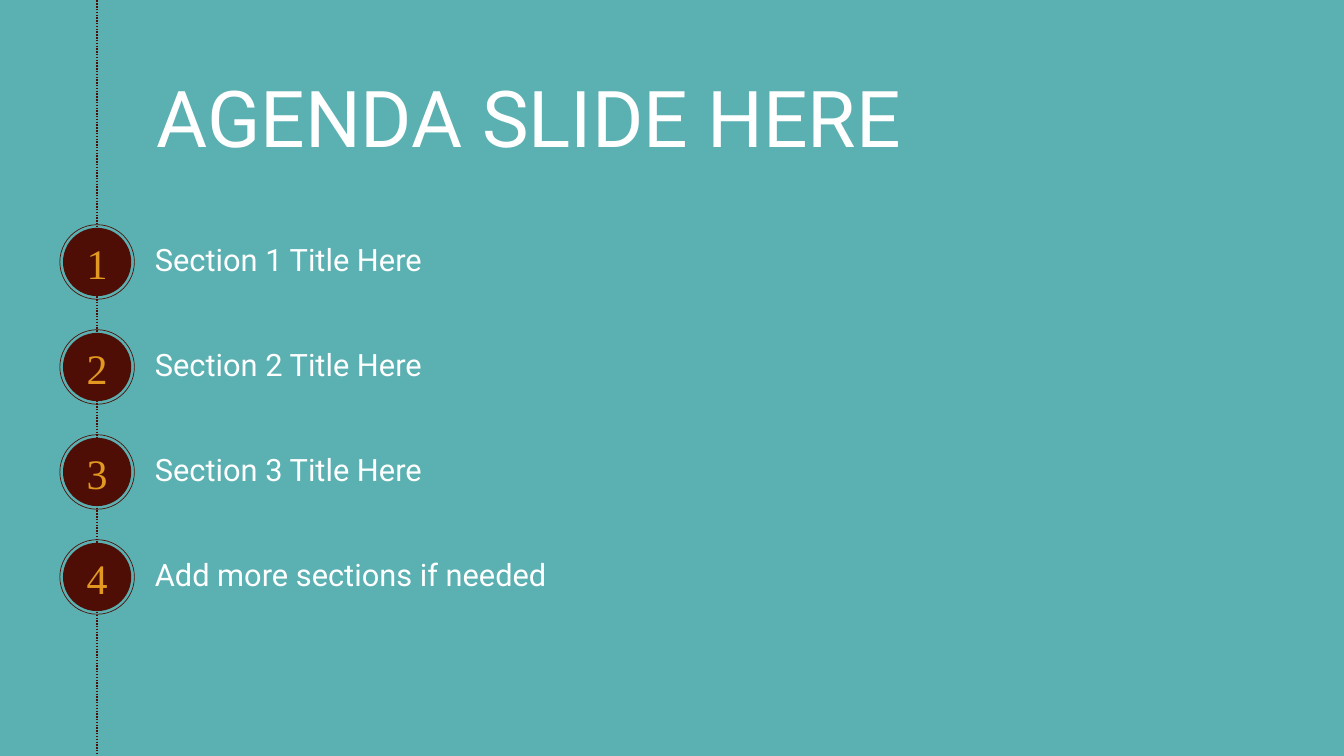
import pptx
import pptx.dml.color
import pptx.enum.dml
import pptx.enum.shapes
import pptx.enum.text
import pptx.oxml.xmlchemy
import pptx.util
from lxml import etree
from pptx.oxml.ns import qn

EMU_PER_PX = 9525
SLIDE_WIDTH, SLIDE_HEIGHT = 2560, 1440
SECTION_PITCH = 200
COLORS = {
    "background": "5BB0B2",
    "maroon": "4E0E05",
    "number": "E39920",
    "text": "FFFFFF",
}
SECTIONS = [
    "Section 1 Title Here",
    "Section 2 Title Here",
    "Section 3 Title Here",
    "Add more sections if needed",
]


def px(length):
    return pptx.util.Emu(length * EMU_PER_PX)


def color(name):
    return pptx.dml.color.RGBColor.from_string(COLORS[name])


def add_plain_shape(slide, kind, box, fill=None, line=None):
    shape = slide.shapes.add_shape(kind, *map(px, box))
    shape.shadow.inherit = False
    if fill:
        shape.fill.solid()
        shape.fill.fore_color.rgb = color(fill)
    else:
        shape.fill.background()
    if line:
        shape.line.color.rgb = color(line)
        shape.line.width = pptx.util.Pt(1)
    else:
        shape.line.fill.background()
    return shape


def add_text(slide, box, text, size, font_name, color_name, inset=0, spacing=1.0, centered=False):
    text_box = slide.shapes.add_textbox(*map(px, box))
    text_frame = text_box.text_frame
    text_frame.word_wrap = True
    text_frame.vertical_anchor = pptx.enum.text.MSO_ANCHOR.MIDDLE
    text_frame.margin_left = text_frame.margin_right = px(inset)
    text_frame.margin_top = text_frame.margin_bottom = px(inset)
    text_frame.text = text
    paragraph = text_frame.paragraphs[0]
    paragraph.line_spacing = spacing
    if centered:
        paragraph.alignment = pptx.enum.text.PP_ALIGN.CENTER
    font = paragraph.runs[0].font
    font.size = pptx.util.Pt(size)
    font.name = font_name
    font.color.rgb = color(color_name)


def add_background(slide, box):
    add_plain_shape(slide, pptx.enum.shapes.MSO_SHAPE.RECTANGLE, box, fill="background")


def add_title(slide, box):
    add_text(slide, box, "AGENDA SLIDE HERE", 112, "Roboto", "text")


def add_timeline(slide, box):
    left, top, width, height = box
    connector = slide.shapes.add_connector(
        pptx.enum.shapes.MSO_CONNECTOR.STRAIGHT,
        px(left), px(top), px(left + width), px(top + height),
    )
    connector.line.color.rgb = color("maroon")
    connector.line.width = pptx.util.Pt(2)
    connector.line.dash_style = pptx.enum.dml.MSO_LINE.ROUND_DOT
    etree.SubElement(connector._element.spPr, qn("a:effectLst"))


def add_section(slide, box, number, title):
    left, top, width, height = box
    oval = pptx.enum.shapes.MSO_SHAPE.OVAL
    add_plain_shape(slide, oval, (left + 6, top + 6, height - 12, height - 12), fill="maroon")
    add_text(slide, (left + 44, top + 9, 54, 125), str(number), 60, "Times New Roman",
             "number", inset=6, centered=True)
    add_plain_shape(slide, oval, (left, top, height, height), line="maroon")
    add_text(slide, (left + 181, top + 28, width - 181, 86), title, 44, "Roboto",
             "text", spacing=0.9)


def main():
    presentation = pptx.Presentation()
    presentation.slide_width = px(SLIDE_WIDTH)
    presentation.slide_height = px(SLIDE_HEIGHT)
    slide = presentation.slides.add_slide(presentation.slide_layouts[6])
    add_background(slide, (-8, -13, 2576, 1468))
    add_title(slide, (298, 124, 2103, 196))
    add_timeline(slide, (185, -42, 0, 1524))
    for index, title in enumerate(SECTIONS):
        add_section(slide, (114, 428 + index * SECTION_PITCH, 2017, 142), index + 1, title)
    presentation.save("out.pptx")


if __name__ == "__main__":
    main()
